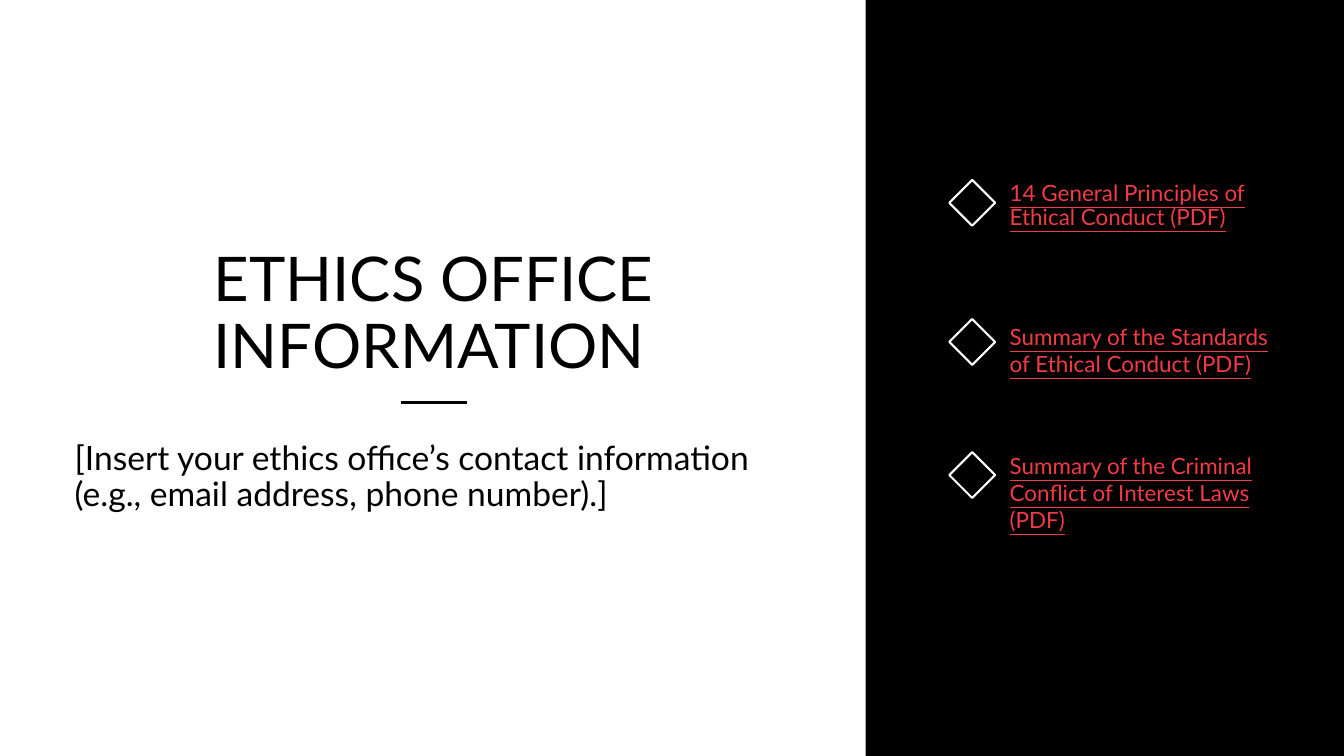
from pptx import Presentation
from pptx.dml.color import RGBColor
from pptx.enum.shapes import MSO_CONNECTOR, MSO_SHAPE
from pptx.enum.text import MSO_ANCHOR, MSO_AUTO_SIZE, PP_ALIGN
from pptx.oxml.ns import qn
from pptx.util import Pt
from lxml import etree

COLORS = {"black": "000000", "white": "FFFFFF", "link": "F33B48"}
FONT = "Lato"
WIDTH, HEIGHT = 1919.52, 1080
PANEL_LEFT = 1236.24
DIAMOND_SIZE = 65.5
DIAMOND_TOPS = (257, 455.75, 645.85)

# Wording, line spacing and space before of each entry
LINKS = (
    ("14 General Principles of Ethical Conduct (PDF)", 0.9, 0),
    ("Summary of the Standards of Ethical Conduct (PDF)", 1.0, 132),
    ("Summary of the Criminal Conflict of Interest Laws (PDF)", 1.0, 108),
)


def color(name):
    return RGBColor.from_string(COLORS[name])


def place(shape, left, top, width, height):
    shape.left, shape.top = Pt(left), Pt(top)
    shape.width, shape.height = Pt(width), Pt(height)


def write_text(shape, entries, size, fill="black", underline=None,
               auto_size=MSO_AUTO_SIZE.NONE):
    """Write (text, line spacing, space before) entries as plain paragraphs."""
    frame = shape.text_frame
    frame.word_wrap = True
    frame.auto_size = auto_size
    frame.vertical_anchor = MSO_ANCHOR.TOP
    for index, (text, line_spacing, space_before) in enumerate(entries):
        paragraph = frame.add_paragraph() if index else frame.paragraphs[0]
        properties = paragraph._p.get_or_add_pPr()
        properties.set("marL", "0")
        properties.set("indent", "0")
        etree.SubElement(properties, qn("a:buNone"))
        paragraph.alignment = PP_ALIGN.LEFT
        paragraph.line_spacing = line_spacing
        paragraph.space_before = Pt(space_before)
        run = paragraph.add_run()
        run.text = text
        run.font.name = FONT
        run.font.size = Pt(size)
        run.font.color.rgb = color(fill)
        run.font.underline = underline


def add_panel(slide):
    panel = slide.shapes.add_shape(
        MSO_SHAPE.RECTANGLE, Pt(PANEL_LEFT), 0, Pt(WIDTH - PANEL_LEFT), Pt(HEIGHT))
    panel.shadow.inherit = False
    panel.fill.solid()
    panel.fill.fore_color.rgb = color("black")
    panel.line.fill.background()


def add_divider(slide, left, right, top):
    divider = slide.shapes.add_connector(
        MSO_CONNECTOR.STRAIGHT, Pt(left), Pt(top), Pt(right), Pt(top))
    divider.line.color.rgb = color("black")
    divider.line.width = Pt(4.5)
    etree.SubElement(divider._element.spPr, qn("a:effectLst"))


def add_diamond(slide, top):
    diamond = slide.shapes.add_shape(
        MSO_SHAPE.DIAMOND, Pt(1355.75), Pt(top), Pt(DIAMOND_SIZE), Pt(DIAMOND_SIZE))
    diamond.shadow.inherit = False
    diamond.fill.background()
    diamond.line.color.rgb = color("white")
    diamond.line.width = Pt(3)


def main():
    presentation = Presentation()
    presentation.slide_width, presentation.slide_height = Pt(WIDTH), Pt(HEIGHT)
    slide = presentation.slides.add_slide(presentation.slide_layouts[1])
    slide.background.fill.solid()
    slide.background.fill.fore_color.rgb = color("white")

    # Black side panel with its markers, and the rule under the title
    add_panel(slide)
    add_divider(slide, 572.4, 666.7, 575.3)
    for top in DIAMOND_TOPS:
        add_diamond(slide, top)

    # Title and contact information
    title, body = slide.placeholders
    place(title, 298, 351.4, 643, 208.8)
    write_text(title, [("ETHICS OFFICE INFORMATION", 0.9, 0)], size=88)
    place(body, 99.4, 627.1, 1040.4, 685.4)
    write_text(body, [("[Insert your ethics office’s contact information "
                       "(e.g., email address, phone number).]", 0.9, 0)], size=48)

    # Reference list on the panel
    links = slide.shapes.add_textbox(Pt(1435), Pt(257), Pt(416.9), Pt(513.4))
    write_text(links, LINKS, size=32, fill="link", underline=True,
               auto_size=MSO_AUTO_SIZE.SHAPE_TO_FIT_TEXT)

    presentation.save("out.pptx")


if __name__ == "__main__":
    main()
